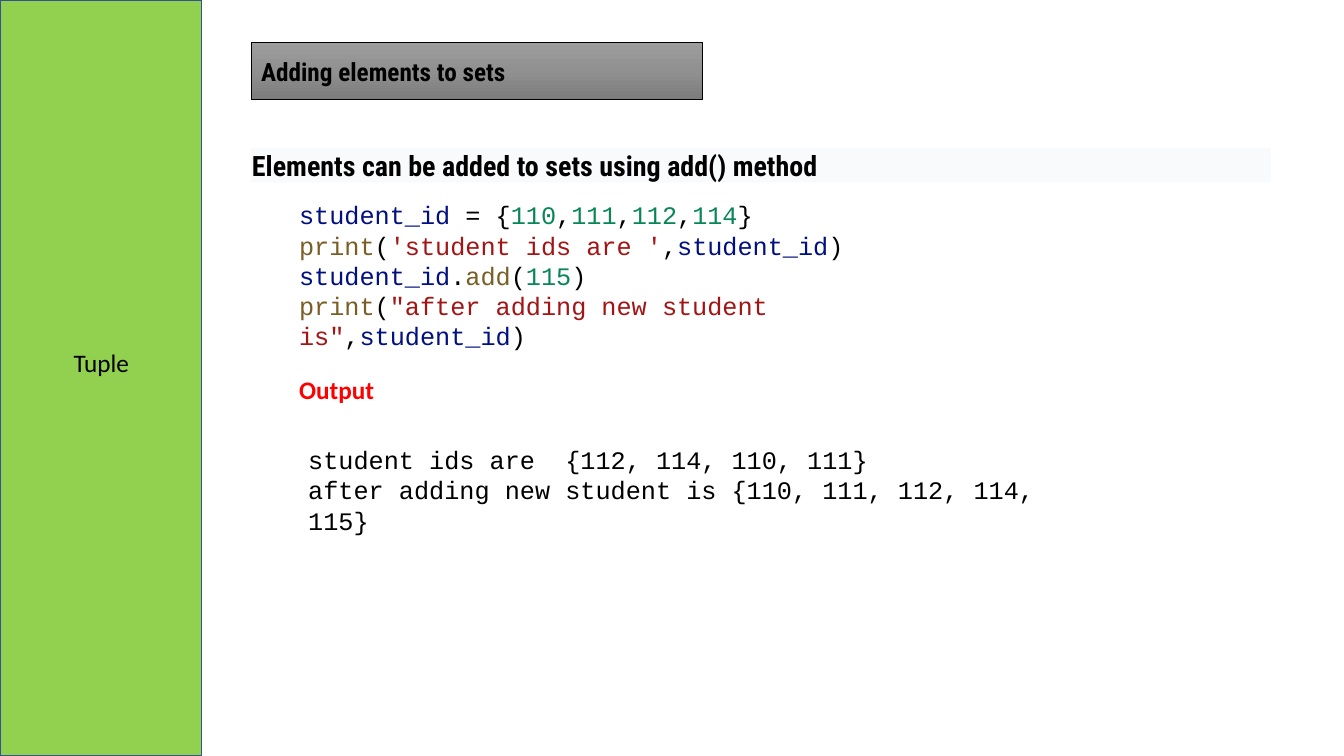
from copy import deepcopy
from typing import NamedTuple

from pptx import Presentation
from pptx.dml.color import RGBColor
from pptx.enum import shapes, text
from pptx.oxml import parse_xml
from pptx.oxml.ns import nsdecls, qn
from pptx.util import Pt

BLACK = RGBColor(0x00, 0x00, 0x00)
GREEN = RGBColor(0x92, 0xD0, 0x50)
SIDEBAR_EDGE = RGBColor(0x32, 0x54, 0x91)
PALE = RGBColor(0xF9, 0xFA, 0xFC)
RED = RGBColor(0xFF, 0x00, 0x00)
BANNER_GREYS = (
    RGBColor(0x9D, 0x9D, 0x9D),
    RGBColor(0x90, 0x90, 0x90),
    RGBColor(0x7C, 0x7C, 0x7C),
)
# Syntax colours of the code
VARIABLE = RGBColor(0x00, 0x10, 0x80)
NUMBER = RGBColor(0x09, 0x86, 0x58)
FUNCTION = RGBColor(0x79, 0x5E, 0x26)
STRING = RGBColor(0xA3, 0x15, 0x15)

BODY_FONT = "Calibri"
CODE_FONT = "Courier New"
HEADING_FONT = "Roboto Condensed"


class Box(NamedTuple):
    """Left, top, width and height in points."""
    left: float
    top: float
    width: float
    height: float

    def lengths(self) -> list:
        return [Pt(value) for value in self]


class Token(NamedTuple):
    text: str
    color: RGBColor = BLACK


class TextBlock(NamedTuple):
    box: Box
    lines: list
    style: dict


STUDENT_ID = Token("student_id", VARIABLE)
PRINT = Token("print", FUNCTION)
OPEN, CLOSE, COMMA = Token("("), Token(")"), Token(",")

CODE = [
    [STUDENT_ID, Token(" = {"), Token("110", NUMBER), COMMA, Token("111", NUMBER), COMMA,
     Token("112", NUMBER), COMMA, Token("114", NUMBER), Token("}")],
    [PRINT, OPEN, Token("'student ids are '", STRING), COMMA, STUDENT_ID, CLOSE],
    [STUDENT_ID, Token("."), Token("add", FUNCTION), OPEN, Token("115", NUMBER), CLOSE],
    [PRINT, OPEN, Token('"after adding new student is"', STRING), COMMA, STUDENT_ID, CLOSE],
]
RESULT = [
    [Token("student ids are  {112, 114, 110, 111}")],
    [Token("after adding new student is {110, 111, 112, 114, 115}")],
]

TEXT_BLOCKS = [
    TextBlock(Box(11.5, 234, 121.7, 36), [[Token("Tuple")]],
              dict(align=text.PP_ALIGN.CENTER, spacing=1.5)),
    TextBlock(Box(206.6, 263.5, 144, 28.8), [[Token("Output", RED)]], dict(bold=True)),
    TextBlock(Box(206.6, 139, 479.5, 94.3), CODE, dict(font=CODE_FONT)),
    TextBlock(Box(213.1, 313.9, 545, 51.1), RESULT, dict(font=CODE_FONT)),
]


def write_text(shape, lines: list, *, font: str = BODY_FONT, size: float = 18,
               bold: bool = False, align=text.PP_ALIGN.LEFT, spacing: float = 1.0,
               anchor=text.MSO_ANCHOR.TOP, insets: tuple = (7.2, 3.6),
               auto_size=text.MSO_AUTO_SIZE.SHAPE_TO_FIT_TEXT) -> None:
    frame = shape.text_frame
    frame.word_wrap = True
    frame.auto_size = auto_size
    frame.vertical_anchor = anchor
    frame.margin_left = frame.margin_right = Pt(insets[0])
    frame.margin_top = frame.margin_bottom = Pt(insets[1])
    for index, tokens in enumerate(lines):
        paragraph = frame.add_paragraph() if index else frame.paragraphs[0]
        paragraph.alignment = align
        paragraph.line_spacing = spacing
        for token in tokens:
            run = paragraph.add_run()
            run.text = token.text
            run.font.name = font
            run.font.size = Pt(size)
            run.font.bold = bold
            run.font.color.rgb = token.color


def add_panel(slide, box: Box, fill: RGBColor):
    panel = slide.shapes.add_shape(shapes.MSO_SHAPE.RECTANGLE, *box.lengths())
    panel.shadow.inherit = False
    panel.fill.solid()
    panel.fill.fore_color.rgb = fill
    panel.line.fill.background()
    return panel


def format_banner(banner, box: Box) -> None:
    """Turn the title placeholder into a grey arrow-shaped banner."""
    banner.left, banner.top, banner.width, banner.height = box.lengths()
    properties = banner.element.spPr
    properties.append(parse_xml(
        f'<a:prstGeom {nsdecls("a")} prst="homePlate"><a:avLst/></a:prstGeom>'))

    banner.fill.gradient()
    banner.fill.gradient_angle = 270
    stop_list = properties.find(".//" + qn("a:gsLst"))
    stop_list.insert(1, deepcopy(stop_list[0]))
    for index, (stop, grey) in enumerate(zip(banner.fill.gradient_stops, BANNER_GREYS)):
        stop.position = index / 2
        stop.color.rgb = grey

    banner.line.color.rgb = BLACK
    banner.line.width = Pt(0.5)


def main() -> None:
    presentation = Presentation()
    presentation.slide_width, presentation.slide_height = Pt(960), Pt(540)
    slide = presentation.slides.add_slide(presentation.slide_layouts.get_by_name("Title Only"))

    # Sidebar
    sidebar = add_panel(slide, Box(0, 0, 144, 540), GREEN)
    sidebar.line.color.rgb = SIDEBAR_EDGE
    sidebar.line.width = Pt(1)

    # Title banner
    banner = slide.shapes.title
    format_banner(banner, Box(179.3, 30.2, 322.6, 41))
    write_text(banner, [[Token("Adding elements to sets")]], font=HEADING_FONT, bold=True,
               anchor=text.MSO_ANCHOR.MIDDLE, auto_size=text.MSO_AUTO_SIZE.NONE)

    # Heading of the example
    heading = add_panel(slide, Box(179.3, 105.8, 728.6, 24.5), PALE)
    write_text(heading, [[Token("Elements can be added to sets using add() method")]],
               font=HEADING_FONT, size=20, bold=True,
               anchor=text.MSO_ANCHOR.MIDDLE, insets=(0.72, 0))

    # Sidebar label, code and output
    for block in TEXT_BLOCKS:
        text_box = slide.shapes.add_textbox(*block.box.lengths())
        write_text(text_box, block.lines, **block.style)

    presentation.save("out.pptx")


if __name__ == "__main__":
    main()
